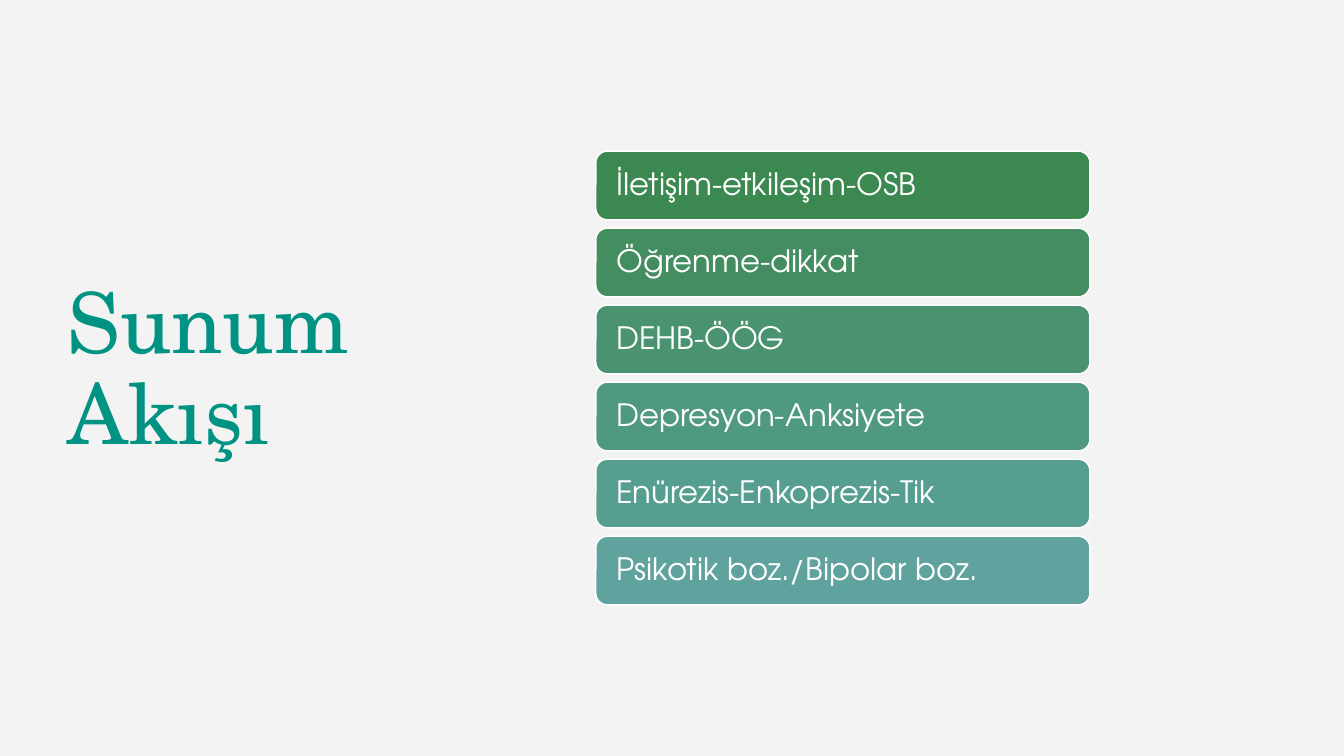
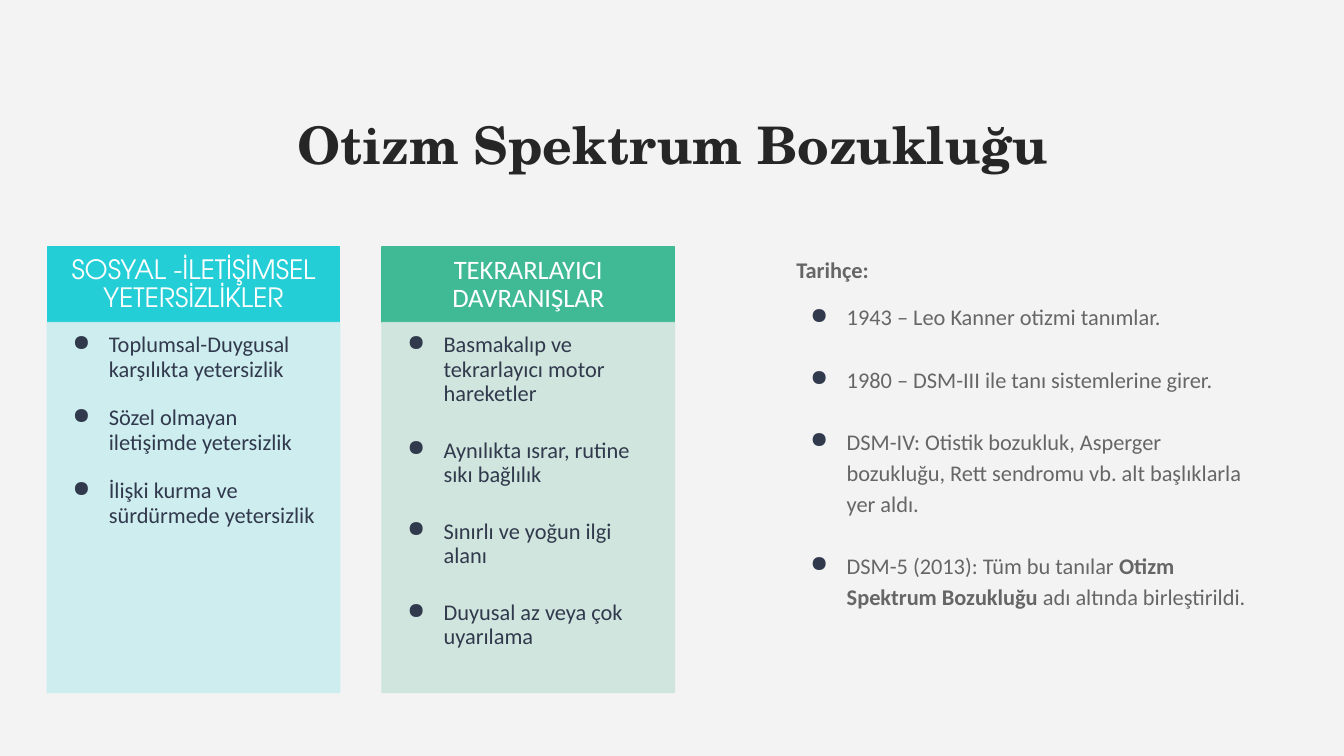
from dataclasses import dataclass, field

from lxml.etree import SubElement
from pptx import Presentation
from pptx.dml.color import RGBColor
from pptx.enum.shapes import MSO_SHAPE
from pptx.enum.text import MSO_ANCHOR, PP_ALIGN
from pptx.oxml.ns import qn
from pptx.util import Inches, Pt

BACKGROUND = "F3F3F3"
WHITE = "FFFFFF"
TEAL = "009384"
CHARCOAL = "262626"
GREY = "666666"
NAVY = "31394D"
SERIF = "TeX Gyre Schola"
GEOMETRIC = "TeX Gyre Adventor"
SANS = "Calibri"
BODY_SIZE = 16


@dataclass(frozen=True)
class Box:
    left: float
    top: float
    width: float
    height: float


@dataclass(frozen=True)
class Style:
    font: str
    size: float
    color: str
    bold: bool = False


@dataclass(frozen=True)
class Span:
    text: str
    bold: bool = False


@dataclass(frozen=True)
class Para:
    spans: list[Span]
    bullet: bool = False
    before: float = 0
    spacing: float = 0.9
    align: PP_ALIGN = PP_ALIGN.LEFT


@dataclass(frozen=True)
class Topic:
    text: str
    fill: str


@dataclass(frozen=True)
class Column:
    heading: str
    heading_font: str
    heading_fill: str
    body_fill: str
    gap: float
    items: list[str] = field(default_factory=list)


TOPICS = [
    Topic("İletişim-etkileşim-OSB", "3B8850"),
    Topic("Öğrenme-dikkat", "438D61"),
    Topic("DEHB-ÖÖG", "499371"),
    Topic("Depresyon-Anksiyete", "4F9982"),
    Topic("Enürezis-Enkoprezis-Tik", "569F90"),
    Topic("Psikotik boz./Bipolar boz.", "60A29E"),
]

COLUMNS = [
    Column("SOSYAL -İLETİŞİMSEL YETERSİZLİKLER", GEOMETRIC, "24CED7", "CBEDEF", 17.6, [
        "Toplumsal-Duygusal karşılıkta yetersizlik",
        "Sözel olmayan iletişimde yetersizlik",
        "İlişki kurma ve sürdürmede yetersizlik",
    ]),
    Column("TEKRARLAYICI DAVRANIŞLAR", SANS, "40B995", "CDE4DB", 23.4, [
        "Basmakalıp ve tekrarlayıcı motor hareketler",
        "Aynılıkta ısrar, rutine sıkı bağlılık",
        "Sınırlı ve yoğun ilgi alanı",
        "Duyusal az veya çok uyarılama",
    ]),
]

HISTORY_TITLE = "Tarihçe:"
HISTORY = [
    [Span("1943 – Leo Kanner otizmi tanımlar.")],
    [Span("1980 – DSM-III ile tanı sistemlerine girer.")],
    [Span("DSM-IV: Otistik bozukluk, Asperger bozukluğu, Rett sendromu vb. "
          "alt başlıklarla yer aldı.")],
    [Span("DSM-5 (2013): Tüm bu tanılar "), Span("Otizm Spektrum Bozukluğu", True),
     Span(" adı altında birleştirildi.")],
]


def rgb(color: str) -> RGBColor:
    return RGBColor.from_string(color)


def place(box: Box) -> tuple:
    return Inches(box.left), Inches(box.top), Inches(box.width), Inches(box.height)


def add_bullet(paragraph) -> None:
    props = paragraph._p.get_or_add_pPr()
    props.set("marL", str(Inches(0.5)))
    props.set("indent", str(Inches(-0.36)))
    bullet_color = SubElement(props, qn("a:buClr"))
    SubElement(bullet_color, qn("a:srgbClr"), val=NAVY)
    SubElement(props, qn("a:buChar"), char="●")


def write(shape, paras: list[Para], style: Style, anchor=MSO_ANCHOR.MIDDLE,
          insets: tuple = (0.1, 0.05, 0.1, 0.05)) -> None:
    frame = shape.text_frame
    frame.word_wrap = True
    frame.vertical_anchor = anchor
    (frame.margin_left, frame.margin_top,
     frame.margin_right, frame.margin_bottom) = map(Inches, insets)
    for index, para in enumerate(paras):
        paragraph = frame.add_paragraph() if index else frame.paragraphs[0]
        paragraph.alignment = para.align
        paragraph.line_spacing = para.spacing
        paragraph.space_before = Pt(para.before)
        if para.bullet:
            add_bullet(paragraph)
        for span in para.spans:
            run = paragraph.add_run()
            run.text = span.text
            run.font.name = style.font
            run.font.size = Pt(style.size)
            run.font.bold = style.bold or span.bold
            run.font.color.rgb = rgb(style.color)


def add_text(slide, box: Box, paras: list[Para], style: Style, anchor=MSO_ANCHOR.MIDDLE) -> None:
    write(slide.shapes.add_textbox(*place(box)), paras, style, anchor)


def add_title(slide, box: Box, text: str, style: Style, align=PP_ALIGN.LEFT) -> None:
    add_text(slide, box, [Para([Span(text)], align=align)], style)


def add_panel(slide, kind, box: Box, fill: str, line: str, opacity: int = 100):
    """Add a filled shape; opacity is a percentage for fill and line."""
    panel = slide.shapes.add_shape(kind, *place(box))
    panel.shadow.inherit = False
    panel.fill.solid()
    panel.fill.fore_color.rgb = rgb(fill)
    panel.line.color.rgb = rgb(line)
    panel.line.width = Pt(1)
    if opacity < 100:
        for color in panel._element.spPr.iter(qn("a:srgbClr")):
            SubElement(color, qn("a:alpha"), val=str(opacity * 1000))
    return panel


def add_slide(deck):
    slide = deck.slides.add_slide(deck.slide_layouts[6])
    slide.background.fill.solid()
    slide.background.fill.fore_color.rgb = rgb(BACKGROUND)
    return slide


def build_agenda(deck) -> None:
    slide = add_slide(deck)
    add_title(slide, Box(0.57, 0.68, 4.16, 6.02), "Sunum Akışı", Style(SERIF, 60, TEAL))
    first_top, last_top, height = 1.5, 5.32, 0.68
    pitch = (last_top - first_top) / (len(TOPICS) - 1)
    for index, topic in enumerate(TOPICS):
        box = Box(5.91, first_top + index * pitch, 4.9, height)
        card = add_panel(slide, MSO_SHAPE.ROUNDED_RECTANGLE, box, topic.fill, WHITE)
        write(card, [Para([Span(topic.text)])], Style(GEOMETRIC, 22, WHITE),
              insets=(0.17, 0.14, 0.17, 0.14))


def add_column(slide, column: Column, left: float) -> None:
    top, width, heading_height, body_height = 2.45, 2.9, 0.75, 3.67
    heading = add_panel(slide, MSO_SHAPE.RECTANGLE, Box(left, top, width, heading_height),
                        column.heading_fill, column.heading_fill)
    write(heading, [Para([Span(column.heading)], align=PP_ALIGN.CENTER)],
          Style(column.heading_font, 19, WHITE), insets=(0.15, 0.08, 0.15, 0.08))
    body = add_panel(slide, MSO_SHAPE.RECTANGLE,
                     Box(left, top + heading_height, width, body_height),
                     column.body_fill, column.body_fill, opacity=90)
    items = [Para([Span(item)], bullet=True, before=column.gap if index else 0)
             for index, item in enumerate(column.items)]
    write(body, items, Style(SANS, BODY_SIZE, NAVY), MSO_ANCHOR.TOP, (0.11, 0.11, 0.15, 0.17))


def build_autism(deck) -> None:
    slide = add_slide(deck)
    add_title(slide, Box(1.17, 0.72, 11, 1.5), "Otizm Spektrum Bozukluğu",
              Style(SERIF, 37, CHARCOAL, bold=True), PP_ALIGN.CENTER)
    for index, column in enumerate(COLUMNS):
        add_column(slide, column, 0.47 + index * 3.32)
    history = [Para([Span(HISTORY_TITLE, True)], spacing=1.15)]
    history += [Para(spans, bullet=True, before=22.4 if index else 12, spacing=1.15)
                for index, spans in enumerate(HISTORY)]
    add_text(slide, Box(7.8, 2.45, 4.84, 4.42), history, Style(SANS, BODY_SIZE, GREY),
             MSO_ANCHOR.TOP)


def main() -> None:
    deck = Presentation()
    deck.slide_width = Inches(13.33)
    deck.slide_height = Inches(7.5)
    build_agenda(deck)
    build_autism(deck)
    deck.save("out.pptx")


if __name__ == "__main__":
    main()
